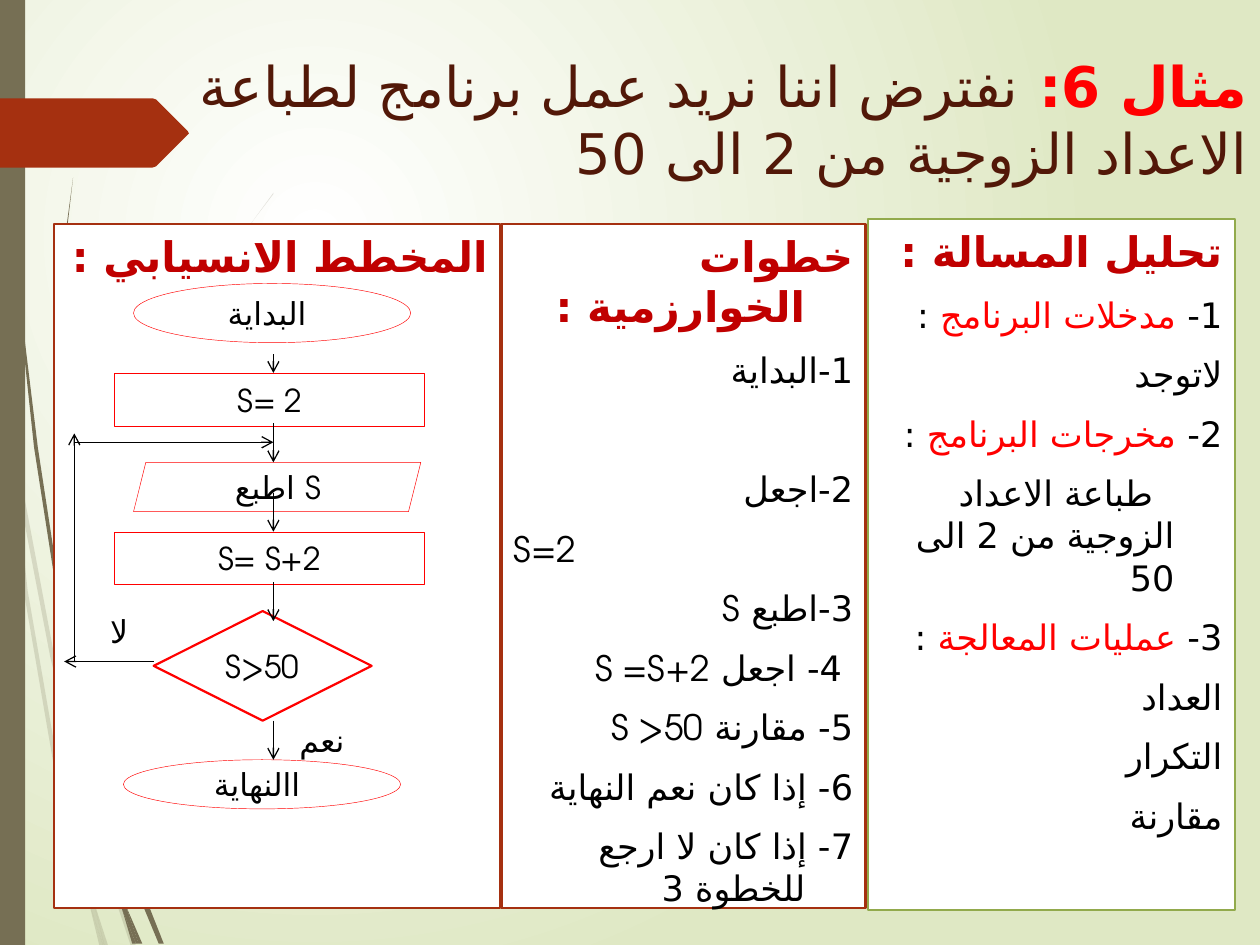
"""Build the Arabic flowchart slide about printing the even numbers from 2 to 50."""
from pptx import Presentation
from pptx import util as u
from pptx.dml.color import RGBColor
from pptx.enum import shapes, text
from pptx.oxml.ns import qn
from lxml import etree

PX = 9144
FONT = "TeX Gyre Adventor"
ARABIC_FONT = "DejaVu Sans"
BLACK = RGBColor(0x00, 0x00, 0x00)
WHITE = RGBColor(0xFF, 0xFF, 0xFF)
RED = RGBColor(0xFF, 0x00, 0x00)
CRIMSON = RGBColor(0xC0, 0x00, 0x00)
RUST = RGBColor(0xA5, 0x30, 0x10)
BROWN = RGBColor(0x52, 0x18, 0x08)
TAUPE = RGBColor(0x76, 0x6F, 0x54)
OLIVE = RGBColor(0x92, 0xAA, 0x4C)
PALE = RGBColor(0xDF, 0xE8, 0xC4)
KIND = shapes.MSO_SHAPE
RIGHT, CENTER, LEFT = text.PP_ALIGN.RIGHT, text.PP_ALIGN.CENTER, text.PP_ALIGN.LEFT
TOP, MIDDLE = text.MSO_ANCHOR.TOP, text.MSO_ANCHOR.MIDDLE

FAINT_WISPS = [
    [(8, 350), (6, 322), (0, 282), (0, 299), (7, 344)],
    [(40, 522), (59, 599), (59, 586), (43, 520), (10, 345), (12, 376)],
    [(64, 607), (61, 596), (61, 610), (85, 694), (104, 751), (108, 751), (88, 692)],
    [(83, 751), (86, 751), (73, 711)],
    [(64, 683), (48, 619), (22, 469), (12, 376), (8, 350), (19, 470), (45, 621),
     (64, 693), (70, 714), (69, 707)],
    [(61, 584), (76, 462), (111, 349), (159, 245), (187, 198), (201, 175), (217, 154),
     (217, 153), (201, 175), (186, 197), (158, 244), (110, 348), (75, 461), (59, 584),
     (59, 586), (61, 596)],
    [(70, 714), (79, 751), (82, 751)],
    [(67, 692), (65, 683), (69, 707), (70, 714), (82, 751), (83, 751), (73, 711)],
]
SOLID_WISPS = [
    [(5, 110), (14, 233), (27, 355), (46, 477), (47, 481), (45, 457), (45, 453),
     (30, 355), (15, 232), (6, 109), (4, 48), (3, 0), (2, 0), (3, 48)],
    [(94, 649), (91, 641), (91, 656), (109, 708), (126, 749), (130, 749), (113, 706)],
    [(91, 691), (81, 657), (60, 556), (53, 505), (47, 477), (56, 557), (77, 659),
     (92, 708), (97, 722), (96, 717)],
    [(50, 472), (48, 453), (44, 349), (48, 245), (52, 193), (58, 141), (51, 193),
     (47, 245), (43, 349), (45, 449), (49, 472)],
    [(110, 749), (113, 749), (100, 719)],
    [(97, 722), (105, 749), (108, 749)],
    [(96, 706), (91, 691), (96, 717), (97, 722), (108, 749), (110, 749), (100, 719)],
]
TAG = [(149, 107), (124, 132), (121, 133), (0, 133), (0, 78), (121, 78), (124, 79),
       (149, 104), (150, 106)]

STEPS = [
    ("1-البداية", {}),
    ("2-اجعل", {"before": 44}),
    ("S=2", {"align": LEFT}),
    ("3-اطبع S", {}),
    (" 4- اجعل S =S+2", {}),
    ("5- مقارنة S >50", {}),
    ("6- إذا كان نعم النهاية", {}),
    ("7- إذا كان لا ارجع للخطوة 3", {}),
]
ANALYSIS = [
    ([("1- ", BLACK), ("مدخلات البرنامج ", RED), (":", BLACK)], {}),
    ("لاتوجد", {}),
    ([("2- ", BLACK), ("مخرجات البرنامج ", RED), (":", BLACK)], {}),
    ("طباعة الاعداد الزوجية من 2 الى 50", {"first": 17}),
    ([("3- ", BLACK), ("عمليات المعالجة ", RED), (":", BLACK)], {}),
    ("العداد", {}),
    ("التكرار", {}),
    ("مقارنة", {}),
]
NODES = [
    (KIND.OVAL, (106, 225, 220, 47), "البداية ", 0.25),
    (KIND.RECTANGLE, (91, 296, 246, 42), "S= 2", 0.25),
    (KIND.PARALLELOGRAM, (106, 367, 228, 39), " اطبع S ", 0.25),
    (KIND.RECTANGLE, (91, 422, 246, 42), "S= S+2", 0.25),
    (KIND.DIAMOND, (122, 485, 173, 87), "S>50", 1.25),
    (KIND.OVAL, (98, 603, 220, 39), "االنهاية ", 0.25),
]
FLOW_X = 217
FLOW_ARROWS = [(281, 296), (336, 367), (391, 422), (462, 493), (572, 603)]
LOOP_ARROWS = [(122, 525, 51, 525), (59, 525, 59, 344), (59, 351, FLOW_X, 351)]


def write(paragraph, content, size=18, color=BLACK, bold=False):
    """Add one formatted run to a paragraph."""
    run = paragraph.add_run()
    run.text = content
    run.font.name = FONT
    run.font.size = u.Pt(size)
    run.font.bold = bold
    run.font.color.rgb = color
    properties = run._r.get_or_add_rPr()
    properties.set("lang", "ar-SA")
    etree.SubElement(properties, qn("a:cs"), typeface=ARABIC_FONT)


def set_rtl(paragraph, align=RIGHT, margin=0, first=0, before=0):
    """Give a paragraph right-to-left direction, margins and spacing."""
    paragraph.alignment = align
    paragraph.space_before = u.Pt(before)
    properties = paragraph._p.get_or_add_pPr()
    for name, value in (("rtl", 1), ("marL", margin * PX), ("indent", first * PX)):
        properties.set(name, str(value))


class Painter:
    """Hold the current slide and draw each kind of element in its style."""

    def __init__(self, slide):
        self.slide = slide

    def background(self):
        fill = self.slide.background.fill
        fill.gradient()
        for stop, position, color in zip(fill.gradient_stops, (0, 1), (WHITE, PALE)):
            stop.position = position
            stop.color.rgb = color
        gradient = self.slide.element.xpath(".//p:bg//a:gradFill")[0]
        gradient.remove(gradient.find(qn("a:lin")))
        circle = etree.SubElement(gradient, qn("a:path"), {"path": "circle"})
        etree.SubElement(circle, qn("a:fillToRect"),
                         {"l": "50000", "t": "50000", "r": "100000", "b": "100000"})

    def title(self, box, parts):
        shape = self.slide.shapes.title
        shape.left, shape.top, shape.width, shape.height = (v * PX for v in box)
        frame = shape.text_frame
        frame.word_wrap = True
        frame.auto_size = text.MSO_AUTO_SIZE.NONE
        frame.vertical_anchor = TOP
        set_rtl(frame.paragraphs[0])
        for content, color, bold in parts:
            write(frame.paragraphs[0], content, size=32, color=color, bold=bold)

    def style(self, shape, fill=None, line=None, width=1.25):
        shape.shadow.inherit = False
        for target, color in ((shape.fill, fill), (shape.line.fill, line)):
            if color is None:
                target.background()
            else:
                target.solid()
                target.fore_color.rgb = color
        if line is not None:
            shape.line.width = u.Pt(width)
        return shape

    def shape(self, kind, box, **style):
        shape = self.slide.shapes.add_shape(kind, *(v * PX for v in box))
        return self.style(shape, **style)

    def outline(self, points, color, alpha=None):
        builder = self.slide.shapes.build_freeform(*points[0], scale=PX)
        builder.add_line_segments(points[1:], close=True)
        shape = self.style(builder.convert_to_shape(), fill=color)
        if alpha is not None:
            tint = shape._element.spPr.find(qn("a:solidFill"))[0]
            etree.SubElement(tint, qn("a:alpha"), val=str(alpha * 1000))

    def panel(self, box, line, heading, items=(), indent=38):
        frame = self.shape(KIND.RECTANGLE, box, fill=WHITE, line=line).text_frame
        frame.word_wrap = True
        frame.vertical_anchor = TOP
        paragraph = frame.paragraphs[0]
        set_rtl(paragraph, margin=indent, first=-indent, before=10)
        write(paragraph, heading, size=24, color=CRIMSON, bold=True)
        for content, layout in items:
            paragraph = frame.add_paragraph()
            set_rtl(paragraph, **{"margin": indent, "first": -indent, "before": 10, **layout})
            runs = [(content, BLACK)] if isinstance(content, str) else content
            for words, color in runs:
                write(paragraph, words, size=20, color=color)

    def centered(self, shape, content):
        frame = shape.text_frame
        frame.word_wrap = True
        frame.vertical_anchor = MIDDLE
        frame.paragraphs[0].alignment = CENTER
        write(frame.paragraphs[0], content)

    def node(self, kind, box, content, width):
        self.centered(self.shape(kind, box, line=RED, width=width), content)

    def label(self, box, content):
        self.centered(self.slide.shapes.add_textbox(*(v * PX for v in box)), content)

    def arrow(self, *ends):
        connector = self.slide.shapes.add_connector(
            shapes.MSO_CONNECTOR.STRAIGHT, *(v * PX for v in ends))
        connector.line.color.rgb = BLACK
        connector.line.width = u.Pt(0.75)
        etree.SubElement(connector.line._get_or_add_ln(), qn("a:tailEnd"), type="arrow")
        etree.SubElement(connector._element.spPr, qn("a:effectLst"))


def main():
    """Compose the slide and save it."""
    presentation = Presentation()
    presentation.slide_width, presentation.slide_height = 1000 * PX, 750 * PX
    painter = Painter(presentation.slides.add_slide(presentation.slide_layouts[5]))
    painter.background()
    for wisp in FAINT_WISPS:
        painter.outline(wisp, TAUPE, alpha=20)
    for wisp in SOLID_WISPS:
        painter.outline(wisp, TAUPE)
    painter.shape(KIND.RECTANGLE, (0, 0, 20, 750), fill=TAUPE)
    painter.outline(TAG, RUST)
    painter.title((75, 36, 925, 79), [
        ("مثال 6: ", RED, True),
        ("نفترض اننا نريد عمل برنامج لطباعة الاعداد الزوجية من 2 الى 50", BROWN, False)])
    painter.panel((398, 178, 289, 543), RUST, "خطوات الخوارزمية :", STEPS)
    painter.panel((689, 174, 291, 548), OLIVE, "تحليل المسالة :", ANALYSIS)
    painter.panel((43, 178, 354, 543), RUST, "المخطط الانسيابي :", indent=35)
    for node in NODES:
        painter.node(*node)
    for start, end in FLOW_ARROWS:
        painter.arrow(FLOW_X, start, FLOW_X, end)
    for ends in LOOP_ARROWS:
        painter.arrow(*ends)
    painter.label((224, 572, 63, 31), "نعم ")
    painter.label((67, 485, 63, 31), "لا ")
    presentation.save("out.pptx")


if __name__ == "__main__":
    main()
